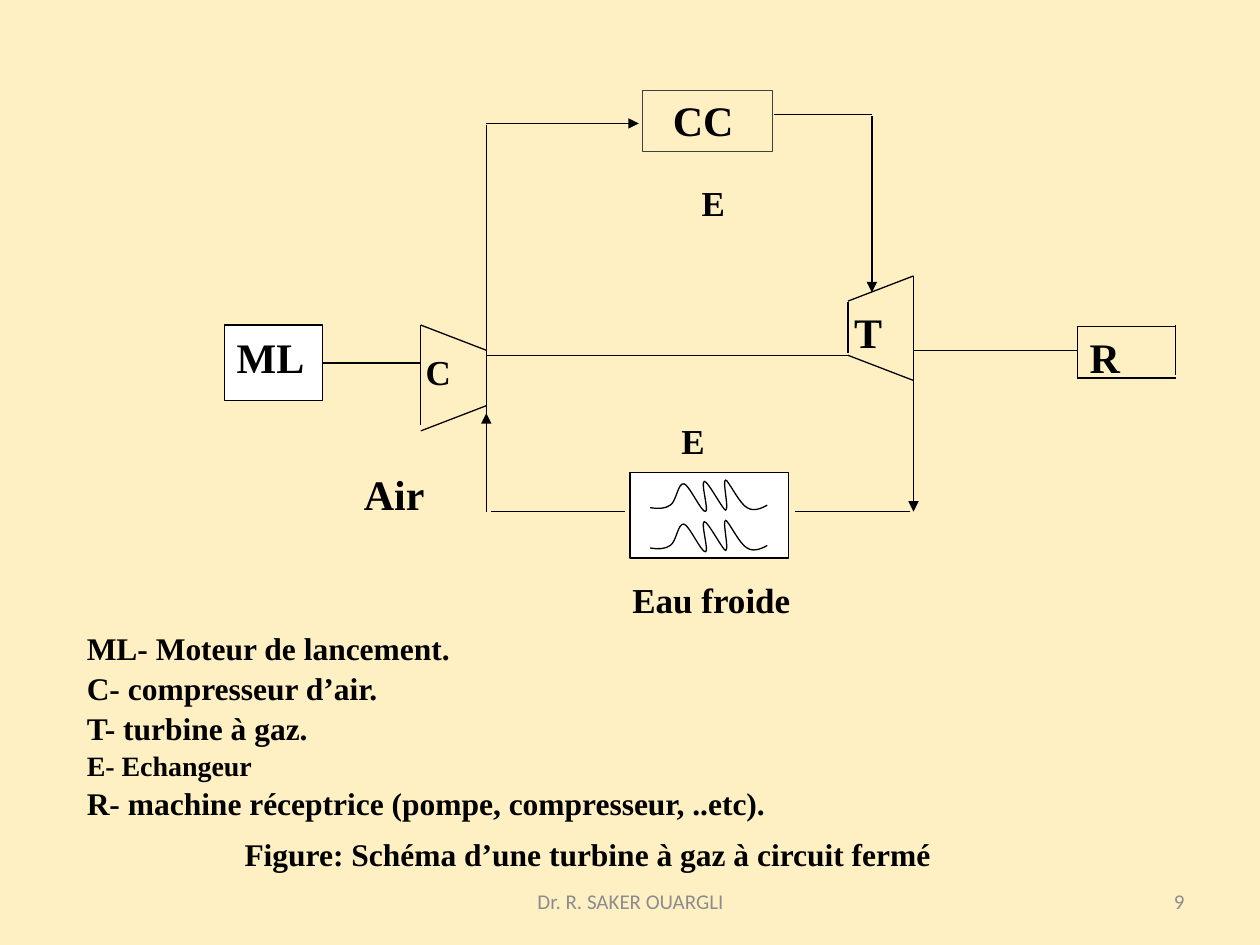
from lxml import etree
from pptx import Presentation
from pptx.dml.color import RGBColor
from pptx.enum import shapes, text
from pptx.oxml import ns
from pptx.util import Inches, Pt

COLORS = {"background": "FFF0C4", "ink": "000000", "paper": "FFFFFF",
          "chamber": "404040", "footer": "8C8C8C"}
SERIF = "Times New Roman"
LEGEND = [("ML- Moteur de lancement.", 18), ("C- compresseur d’air.", 18),
          ("T- turbine à gaz.", 18), ("E- Echangeur", 16),
          ("R- machine réceptrice (pompe, compresseur, ..etc).", 18)]
COIL_CURVE = [(0, 0.22), (0.06, 0.23), (0.12, 0.23), (0.16, 0.2),
              (0.21, 0.17), (0.22, 0.02), (0.27, 0.03),
              (0.31, 0.04), (0.41, 0.26), (0.44, 0.25),
              (0.47, 0.25), (0.4, 0.02), (0.43, 0.01),
              (0.46, 0.01), (0.58, 0.24), (0.6, 0.24),
              (0.63, 0.23), (0.57, 0), (0.6, 0),
              (0.62, 0), (0.71, 0.19), (0.77, 0.22),
              (0.83, 0.26), (0.91, 0.21), (0.93, 0.2)]


def color(name):
    """Return a named colour."""
    return RGBColor.from_string(COLORS[name])


def write(shape, lines, font=SERIF, ink="ink", bold=True, align=text.PP_ALIGN.LEFT,
          anchor=text.MSO_ANCHOR.TOP, spacing=None):
    """Fill a shape with (wording, size) lines."""
    frame = shape.text_frame
    frame.text = "\n".join(wording for wording, size in lines)
    frame.word_wrap = True
    frame.vertical_anchor = anchor
    for paragraph, (wording, size) in zip(frame.paragraphs, lines):
        paragraph.alignment = align
        paragraph.line_spacing = spacing
        for run in paragraph.runs:
            run.font.name, run.font.size, run.font.bold = font, Pt(size), bold
            run.font.color.rgb = color(ink)


def add_text(slide, left, top, width, height, lines, **style):
    """Add a text box."""
    box = slide.shapes.add_textbox(Inches(left), Inches(top), Inches(width), Inches(height))
    write(box, lines, **style)
    return box


def add_box(slide, left, top, width, height, fill=None, outline="ink"):
    """Add an outlined rectangle."""
    box = slide.shapes.add_shape(shapes.MSO_SHAPE.RECTANGLE, Inches(left), Inches(top),
                                 Inches(width), Inches(height))
    box.shadow.inherit = False
    if fill:
        box.fill.solid()
        box.fill.fore_color.rgb = color(fill)
    else:
        box.fill.background()
    box.line.color.rgb = color(outline)
    box.line.width = Pt(0.75)
    return box


def add_lines(slide, left, top, segments, arrow=False):
    """Draw (x1, y1, x2, y2) segments from a corner and return the connectors."""
    connectors = []
    for x1, y1, x2, y2 in segments:
        connector = slide.shapes.add_connector(
            shapes.MSO_CONNECTOR.STRAIGHT, Inches(left + x1), Inches(top + y1),
            Inches(left + x2), Inches(top + y2))
        connector.line.color.rgb = color("ink")
        connector.line.width = Pt(0.75)
        if arrow:
            outline = connector.line._get_or_add_ln()
            etree.SubElement(outline, ns.qn("a:tailEnd"), type="triangle")
        etree.SubElement(connector._element.spPr, ns.qn("a:effectLst"))
        connectors.append(connector)
    return connectors


def add_coil(slide, left, top):
    """Draw one wavy tube as a chain of Bézier curves."""
    points = [(Inches(left + x), Inches(top + y)) for x, y in COIL_CURVE]
    builder = slide.shapes.build_freeform(*points[0])
    builder.add_line_segments(points[1:], close=False)
    coil = builder.convert_to_shape()
    coil.shadow.inherit = False
    coil.fill.background()
    coil.line.color.rgb = color("ink")
    coil.line.width = Pt(0.75)
    segments = list(coil._element.iter(ns.qn("a:lnTo")))
    outline = segments[0].getparent()
    for start in range(0, len(segments), 3):
        curve = etree.SubElement(outline, ns.qn("a:cubicBezTo"))
        for segment in segments[start:start + 3]:
            curve.append(segment[0])
            outline.remove(segment)


def add_starter(slide, left, top):
    """Place the starter motor and its shaft."""
    motor = add_box(slide, left, top, 0.78, 0.6, fill="paper")
    write(motor, [("ML", 24)])
    shaft, = add_lines(slide, left, top, [(0.78, 0.3, 1.56, 0.3)])
    shaft.begin_connect(motor, 3)


def add_compressor(slide, left, top):
    """Place the narrowing compressor and its label."""
    add_lines(slide, left, top, [(0, 0, 0, 0.79), (0, 0, 0.52, 0.2), (0, 0.84, 0.52, 0.64)])
    add_text(slide, left - 0.06, top + 0.15, 0.78, 0.4, [("C", 20)])


def add_turbine(slide, left, top):
    """Place the widening turbine and its label."""
    add_lines(slide, left, top, [(0, 0.21, 0, 0.61), (0, 0.2, 0.52, 0),
                                 (0, 0.63, 0.52, 0.83), (0.52, 0, 0.52, 0.79)])
    add_text(slide, left - 0.05, top + 0.19, 0.78, 0.4, [("T", 24)])


def add_receiver(slide, left, top):
    """Place the driven machine and its shaft."""
    add_lines(slide, left, top, [(0, 0, 0, 0.4), (0.78, -0.01, 0.78, 0.39), (0, 0, 0.78, 0),
                                 (0, 0.41, 0.78, 0.41), (-1.3, 0.19, 0, 0.19)])
    add_text(slide, left, top - 0.01, 0.78, 0.64, [("R", 24)])


def add_chamber(slide, left, top):
    """Place the combustion chamber and the exchanger mark below it."""
    chamber = add_box(slide, left, top, 1.03, 0.48, outline="chamber")
    write(chamber, [("CC", 24)])
    chamber.text_frame.margin_left = Inches(0.24)
    chamber.text_frame.margin_top = Inches(0.03)
    add_text(slide, left + 0.37, top + 0.67, 0.55, 0.39, [("E", 20)])


def add_exchanger(slide, left, top):
    """Place the cold-water exchanger, its coils and its labels."""
    add_box(slide, left, top, 1.26, 0.68, fill="paper")
    for offset in (0.06, 0.38):
        add_coil(slide, left + 0.16, top + offset)
    add_text(slide, left + 0.31, top - 0.47, 0.47, 0.39, [("E", 20)])
    add_text(slide, left - 0.08, top + 0.79, 1.57, 0.39, [("Eau froide", 20)])


def add_circuit(slide, left, top):
    """Draw the closed gas circuit between the machines."""
    add_lines(slide, left, top, [(0, 0.08, 0, 2.48), (2.28, 0, 3.06, 0), (0, 1.91, 2.87, 1.91),
                                 (0.04, 3.15, 1.1, 3.15), (2.45, 3.15, 3.36, 3.15)])
    add_lines(slide, left, top, [(0, 0.07, 1.21, 0.07), (3.06, 0.01, 3.06, 1.41),
                                 (3.39, 2.05, 3.39, 3.15), (0, 3.15, 0, 2.37)], arrow=True)
    add_text(slide, left - 1.07, top + 2.76, 0.97, 0.6, [("Air", 24)])


def add_captions(slide, left, top):
    """Place the legend and the figure title."""
    add_text(slide, left, top, 6.38, 1.58, LEGEND, spacing=1.05)
    add_text(slide, left + 0.79, top + 1.65, 6.57, 0.4,
             [("Figure: Schéma d’une turbine à gaz à circuit fermé", 18)],
             align=text.PP_ALIGN.CENTER)


def add_footer(slide, left, top):
    """Place the author and the slide number."""
    style = dict(font="Calibri", ink="footer", bold=False, anchor=text.MSO_ANCHOR.MIDDLE)
    add_text(slide, left, top, 3.17, 0.4, [("Dr. R. SAKER OUARGLI", 12)],
             align=text.PP_ALIGN.CENTER, **style)
    add_text(slide, left + 3.75, top, 2.33, 0.4, [("9", 12)],
             align=text.PP_ALIGN.RIGHT, **style)


def main():
    """Build and save the slide."""
    presentation = Presentation()
    presentation.slide_width, presentation.slide_height = Inches(10), Inches(7.5)
    slide = presentation.slides.add_slide(presentation.slide_layouts[6])
    slide.background.fill.solid()
    slide.background.fill.fore_color.rgb = color("background")
    add_footer(slide, 3.42, 6.95)
    add_circuit(slide, 3.86, 0.91)
    add_starter(slide, 1.78, 2.58)
    add_compressor(slide, 3.34, 2.58)
    add_turbine(slide, 6.73, 2.19)
    add_receiver(slide, 8.55, 2.59)
    add_exchanger(slide, 5, 3.75)
    add_chamber(slide, 5.1, 0.72)
    add_captions(slide, 0.59, 4.93)
    presentation.save("out.pptx")


if __name__ == "__main__":
    main()
